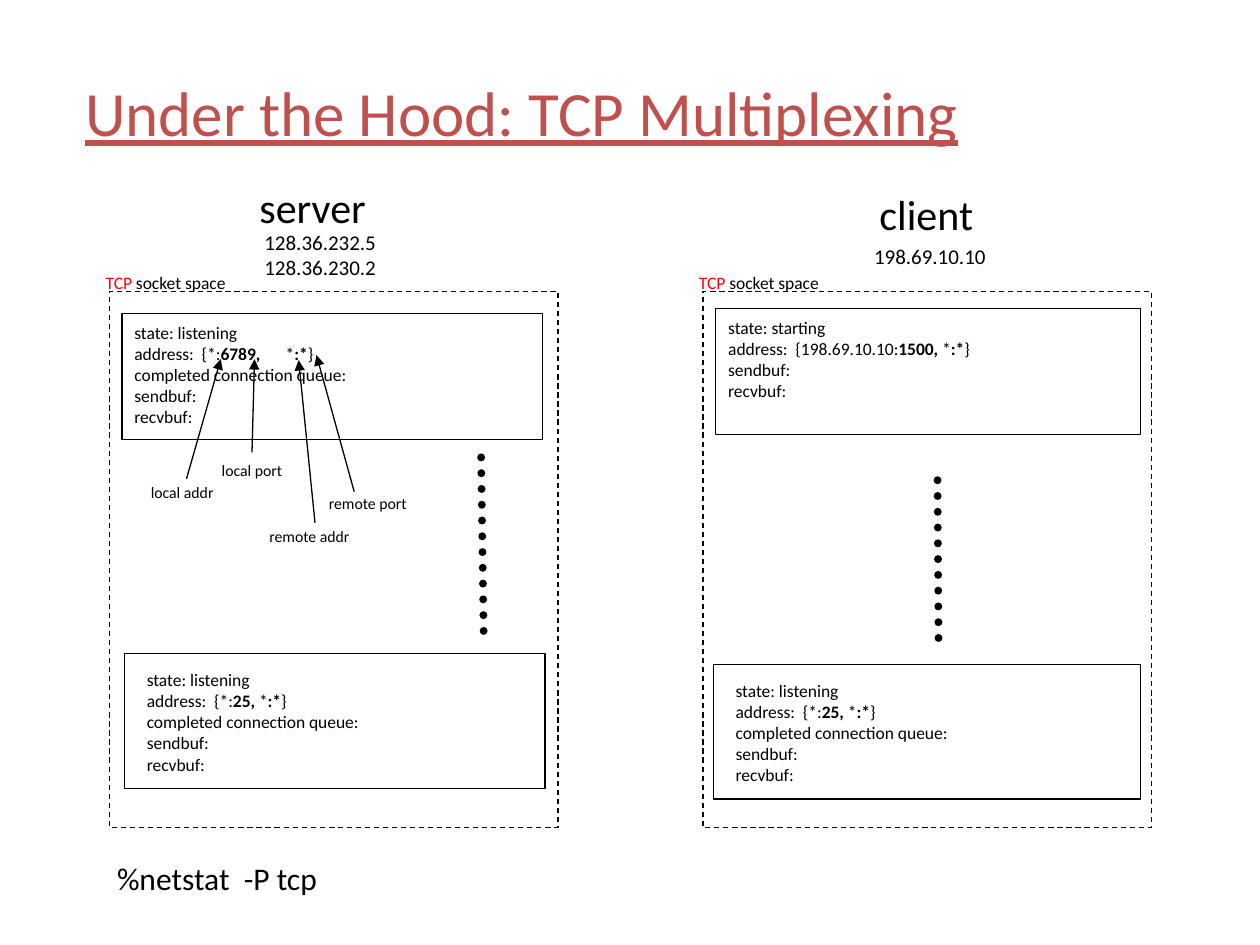
from pptx import Presentation
from pptx.dml.color import RGBColor
from pptx.enum.dml import MSO_LINE
from pptx.enum.shapes import MSO_CONNECTOR, MSO_SHAPE
from pptx.enum.text import MSO_ANCHOR
from pptx.oxml.ns import qn
from pptx.util import Cm, Pt
from lxml import etree

BLACK = RGBColor(0x00, 0x00, 0x00)
RED = RGBColor(0xFF, 0x00, 0x00)
BRICK = RGBColor(0xC0, 0x50, 0x4D)

RECTANGLE = MSO_SHAPE.RECTANGLE
STRAIGHT = MSO_CONNECTOR.STRAIGHT
TOP, MIDDLE = MSO_ANCHOR.TOP, MSO_ANCHOR.MIDDLE
SOLID, DASH, DOTS = MSO_LINE.SOLID, MSO_LINE.DASH, MSO_LINE.ROUND_DOT

FONT = "Calibri"
PORT_TAB = Cm(3.05)


def add_run(paragraph, text, *, size=10, color=BLACK, bold=False, underline=False):
    run = paragraph.add_run()
    run.text = text
    font = run.font
    font.name, font.size, font.bold, font.underline = FONT, Pt(size), bold, underline
    font.color.rgb = color


class SlideBuilder:
    """Draws the elements of one slide in a shared style; lengths are in cm."""

    def __init__(self, slide):
        self.slide = slide
        self.thin = Pt(0.75)

    def text(self, left, top, width, height, lines, *, anchor=TOP, **style):
        """Each line is a string or a list of (text, format) pairs."""
        box = self.slide.shapes.add_textbox(Cm(left), Cm(top), Cm(width), Cm(height))
        frame = box.text_frame
        frame.word_wrap = True
        frame.vertical_anchor = anchor
        for index, line in enumerate(lines):
            paragraph = frame.add_paragraph() if index else frame.paragraphs[0]
            runs = [(line, {})] if isinstance(line, str) else line
            for text, extra in runs:
                add_run(paragraph, text, **{**style, **extra})
                if "\t" in text:
                    self.tab_stop(paragraph, PORT_TAB)

    def tab_stop(self, paragraph, position):
        properties = paragraph._p.get_or_add_pPr()
        stops = etree.SubElement(properties, qn("a:tabLst"))
        etree.SubElement(stops, qn("a:tab"), pos=str(position), algn="l")

    def frame(self, left, top, width, height, *, dash=SOLID):
        shape = self.slide.shapes.add_shape(
            RECTANGLE, Cm(left), Cm(top), Cm(width), Cm(height))
        shape.shadow.inherit = False
        shape.fill.background()
        shape.line.color.rgb = BLACK
        shape.line.width = self.thin
        shape.line.dash_style = dash

    def line(self, start, end):
        connector = self.slide.shapes.add_connector(
            STRAIGHT, *(Cm(value) for value in (*start, *end)))
        etree.SubElement(connector._element.spPr, qn("a:effectLst"))
        connector.line.color.rgb = BLACK
        connector.line.width = self.thin
        return connector.line

    def arrow(self, start, end):
        line = self.line(start, end)
        etree.SubElement(line._get_or_add_ln(), qn("a:tailEnd"), type="triangle")

    def dots(self, start, end):
        line = self.line(start, end)
        line.width = Pt(4.5)
        line.dash_style = DOTS
        line._get_or_add_ln().set("cap", "rnd")

    def socket_space(self, left):
        self.frame(left, 5.88, 9.04, 10.8, dash=DASH)
        self.text(left - 0.33, 5.36, 3.35, 0.69,
                  [[("TCP", {"color": RED}), (" socket space", {})]])

    def socket(self, left, top, width, height, inset, state, local, port, queue=True):
        """A socket record; inset is the offset of its text from the frame."""
        bold = {"bold": True}
        lines = [f"state: {state}",
                 [("address:  {" + local + ":", {}), (port, bold),
                  ("*", {}), (":*", bold), ("}", {})]]
        if queue:
            lines.append("completed connection queue:")
        lines += ["sendbuf:", "recvbuf:"]
        self.frame(left, top, width, height)
        self.text(left + inset[0], top + inset[1], 6.2, 2.36, lines)


def main():
    presentation = Presentation()
    presentation.slide_width, presentation.slide_height = Cm(25.4), Cm(19.05)
    slide = presentation.slides.add_slide(presentation.slide_layouts[6])
    builder = SlideBuilder(slide)

    # Title
    builder.text(1.47, 0.66, 22.38, 3.18, ["Under the Hood: TCP Multiplexing"],
                 anchor=MIDDLE, size=36, color=BRICK, underline=True)

    # Hosts and their addresses
    builder.text(4.98, 3.53, 3.07, 1.27, ["server"], anchor=MIDDLE, size=24)
    builder.text(17.48, 3.68, 2.72, 1.27, ["client"], anchor=MIDDLE, size=24)
    builder.text(5.08, 4.5, 3.1, 1.27, ["128.36.232.5", "128.36.230.2"], size=12)
    builder.text(17.37, 4.78, 2.95, 0.76, ["198.69.10.10"], size=12)

    # Socket spaces
    for left in (2.21, 14.17):
        builder.socket_space(left)

    # Sockets
    upper, lower = (0, 0.05), (0.2, 0.19)
    builder.socket(2.46, 6.32, 8.48, 2.54, upper, "listening", "*", "6789,\t")
    builder.socket(2.51, 13.18, 8.48, 2.72, lower, "listening", "*", "25, ")
    builder.socket(14.43, 6.22, 8.56, 2.54, upper, "starting", "198.69.10.10",
                   "1500, ", queue=False)
    builder.socket(14.38, 13.39, 8.61, 2.72, lower, "listening", "*", "25, ")

    # Further sockets in between
    builder.dots((9.7, 9.22), (9.75, 12.75))
    builder.dots((18.9, 9.68), (18.92, 12.9))

    # Parts of the address: label, its place and width, arrow start and end
    address_parts = [
        ("local addr", 2.79, 9.6, 1.96, (3.76, 9.65), (4.45, 7.24)),
        ("local port", 4.22, 9.17, 1.93, (5.08, 9.12), (5.13, 7.24)),
        ("remote addr", 5.18, 10.49, 2.36, (6.35, 10.54), (6.02, 7.26)),
        ("remote port", 6.38, 9.83, 2.31, (7.14, 9.91), (6.38, 7.16)),
    ]
    for label, left, top, width, start, end in address_parts:
        builder.arrow(start, end)
        builder.text(left, top, width, 0.64, [label], size=9)

    # Command
    builder.text(2.11, 17.2, 4.6, 1.02, ["%netstat  -P tcp"], size=18)

    presentation.save("out.pptx")


if __name__ == "__main__":
    main()
